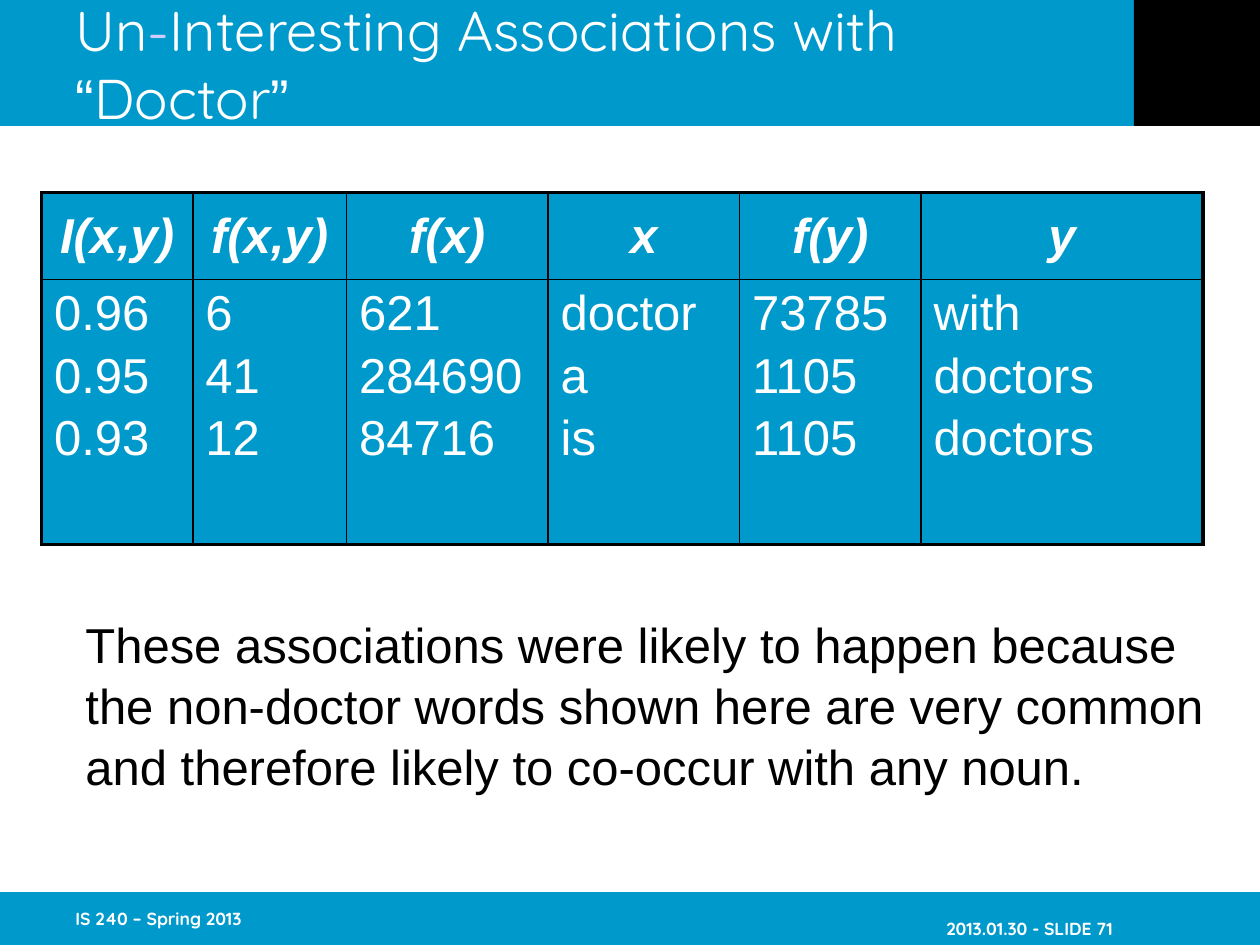
from typing import NamedTuple

from lxml import etree
from pptx import Presentation
from pptx.dml.color import RGBColor
from pptx.enum.shapes import MSO_SHAPE
from pptx.enum.text import MSO_ANCHOR, MSO_AUTO_SIZE, PP_ALIGN
from pptx.oxml.ns import qn
from pptx.util import Inches, Pt

RECT = MSO_SHAPE.RECTANGLE
TOP, MIDDLE = MSO_ANCHOR.TOP, MSO_ANCHOR.MIDDLE
LEFT, CENTER, RIGHT = PP_ALIGN.LEFT, PP_ALIGN.CENTER, PP_ALIGN.RIGHT
COLORS = {"blue": "0099CC", "black": "000000", "white": "FFFFFF", "lilac": "CCCCFF"}
OUTER, INNER = 2.25, 1


class Band(NamedTuple):
    left: float
    top: float
    width: float
    height: float
    color: str


class Run(NamedTuple):
    text: str
    size: float
    font: str = "Arial"
    color: str = "white"
    bold: bool = False
    italic: bool = False


class Label(NamedTuple):
    left: float
    top: float
    width: float
    height: float
    lines: list[Run]
    align: PP_ALIGN = LEFT
    anchor: MSO_ANCHOR = MIDDLE
    right_inset: float = 0
    gap: float = 0
    wrap: bool = True


BANDS = [
    Band(0, 0, 10, 1, "blue"),
    Band(0, 7.08, 10, 0.42, "blue"),
    Band(9, 0, 1, 1, "black"),
]
TITLE = [
    Run("Un", 32, "Quicksand"),
    Run("-", 32, "Quicksand", "lilac"),
    Run("Interesting Associations with ", 32, "Quicksand"),
    Run("“", 32),
    Run("Doctor", 32, "Quicksand"),
    Run("”", 32),
]
REMARK = [
    "These associations were likely to happen because",
    "the non-doctor words shown here are very common",
    "and therefore likely to co-occur with any noun.",
]
LABELS = [
    Label(0.5, 7.08, 2.08, 0.42,
          [Run("IS 240 – Spring 2013", 10, "Quicksand", bold=True)]),
    Label(6.75, 7.16, 2.08, 0.42,
          [Run("2013.01.30 - SLIDE 71", 10, "Quicksand", bold=True)], RIGHT),
    Label(0.58, 4.83, 9.09, 1.5, [Run(line, 28, color="black") for line in REMARK],
          anchor=TOP, right_inset=0.1, gap=1.3, wrap=False),
]
COLUMNS = {
    "I(x,y)": (1.2, ["0.96", "0.95", "0.93"]),
    "f(x,y)": (1.22, ["6", "41", "12"]),
    "f(x)": (1.6, ["621", "284690", "84716"]),
    "x": (1.52, ["doctor", "a", "is"]),
    "f(y)": (1.44, ["73785", "1105", "1105"]),
    "y": (2.24, ["with", "doctors", "doctors"]),
}
ROW_HEIGHTS = [0.69, 2.1]


def rgb(name: str) -> RGBColor:
    return RGBColor.from_string(COLORS[name])


def add_run(p, run: Run) -> None:
    r = p.add_run()
    r.text = run.text
    r.font.name, r.font.size = run.font, Pt(run.size)
    r.font.bold, r.font.italic = run.bold, run.italic
    r.font.color.rgb = rgb(run.color)


def add_lines(tf, lines: list[Run], align: PP_ALIGN, gap: float) -> None:
    """Write one paragraph per run, with a gap in points between them."""
    for i, run in enumerate(lines):
        p = tf.add_paragraph() if i else tf.paragraphs[0]
        p.alignment = align
        if i:
            p.space_before = Pt(gap)
        add_run(p, run)


def add_band(s, band: Band) -> None:
    sp = s.shapes.add_shape(RECT, *map(Inches, band[:4]))
    sp.shadow.inherit = False
    sp.fill.solid()
    sp.fill.fore_color.rgb = rgb(band.color)
    sp.line.fill.background()


def add_label(s, label: Label) -> None:
    tf = s.shapes.add_textbox(*map(Inches, label[:4])).text_frame
    tf.word_wrap = label.wrap
    tf.vertical_anchor = label.anchor
    tf.margin_right = Inches(label.right_inset)
    add_lines(tf, label.lines, label.align, label.gap)


def place_title(s) -> None:
    title = s.shapes.title
    title.left, title.top, title.width, title.height = map(Inches, (0.5, 0, 8.5, 1))
    # Bring the title in front of the bands
    title.element.getparent().append(title.element)
    tf = title.text_frame
    tf.auto_size = MSO_AUTO_SIZE.NONE
    tf.vertical_anchor = MIDDLE
    p = tf.paragraphs[0]
    p.alignment = LEFT
    for run in TITLE:
        add_run(p, run)


def set_border(tc_pr, side: str, width: float) -> None:
    ln = etree.SubElement(tc_pr, qn(f"a:ln{side}"), w=str(Pt(width)))
    fill = etree.SubElement(ln, qn("a:solidFill"))
    etree.SubElement(fill, qn("a:srgbClr"), val=COLORS["black"])


def format_cell(cell, edges: dict[str, bool]) -> None:
    """Fill the cell and rule its sides, heavier on the table's outer edges."""
    tc_pr = cell._tc.get_or_add_tcPr()
    for side, is_outer in edges.items():
        set_border(tc_pr, side, OUTER if is_outer else INNER)
    cell.fill.solid()
    cell.fill.fore_color.rgb = rgb("blue")


def add_association_table(s) -> None:
    last = len(COLUMNS) - 1
    frame = s.shapes.add_table(2, len(COLUMNS), Inches(0.33), Inches(1.53),
                               Inches(9.22), Inches(sum(ROW_HEIGHTS)))
    table = frame.table
    table.first_row = table.horz_banding = False
    for row, height in zip(table.rows, ROW_HEIGHTS):
        row.height = Inches(height)
    for c, (heading, (width, values)) in enumerate(COLUMNS.items()):
        table.columns[c].width = Inches(width)
        head, body = table.cell(0, c), table.cell(1, c)
        for cell, is_head in ((head, True), (body, False)):
            format_cell(cell, {"L": c == 0, "R": c == last,
                               "T": is_head, "B": not is_head})
        head.vertical_anchor = MIDDLE
        add_lines(head.text_frame, [Run(heading, 28, bold=True, italic=True)], CENTER, 0)
        add_lines(body.text_frame, [Run(v, 28) for v in values], LEFT, 4.7)


def main() -> None:
    prs = Presentation()
    prs.slide_width, prs.slide_height = Inches(10), Inches(7.5)
    s = prs.slides.add_slide(prs.slide_layouts[5])
    for band in BANDS:
        add_band(s, band)
    for label in LABELS:
        add_label(s, label)
    place_title(s)
    add_association_table(s)
    prs.save("out.pptx")


if __name__ == "__main__":
    main()
